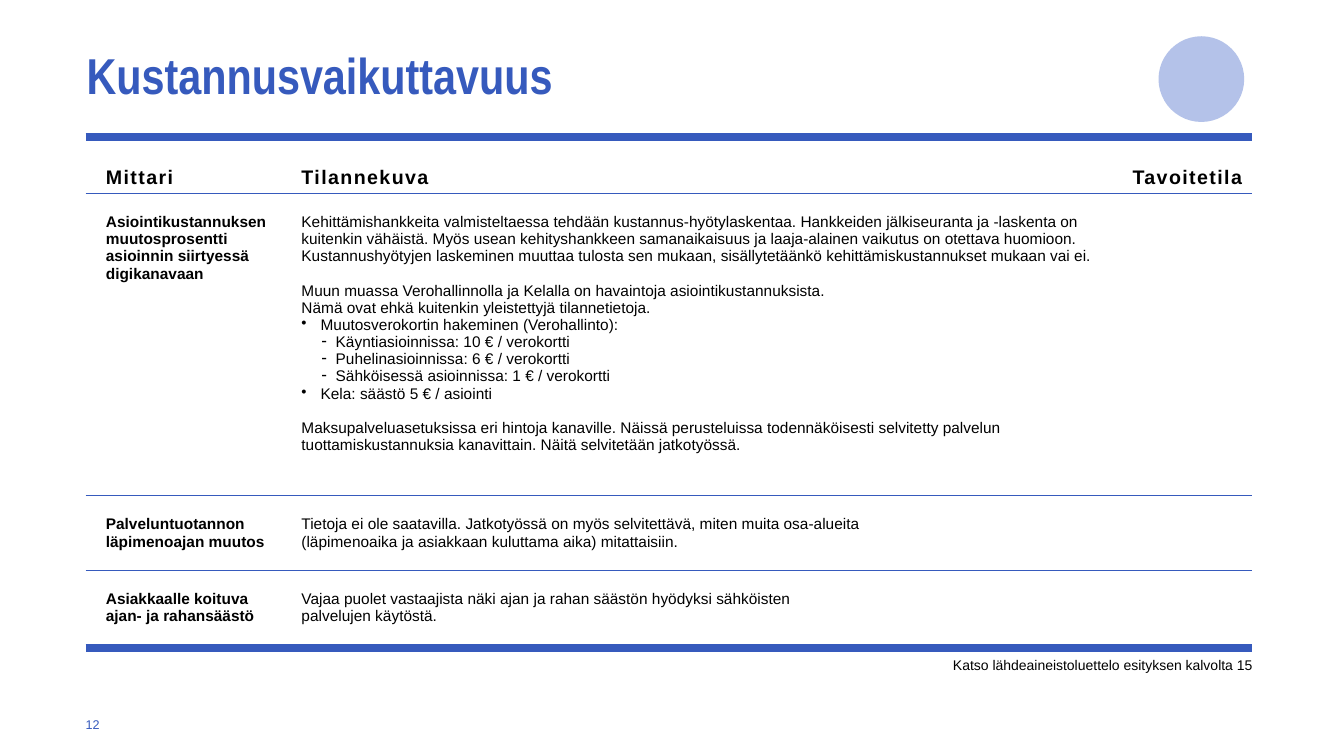
from lxml.etree import SubElement
from pptx import Presentation
from pptx.dml.color import RGBColor
from pptx.enum.shapes import MSO_SHAPE
from pptx.enum.text import MSO_ANCHOR, PP_ALIGN
from pptx.oxml.ns import qn
from pptx.util import Emu, Inches, Pt

INK = {"blue": "365ABD", "pale": "ACBCE7", "black": "000000"}
WIDE, HIGH = 13.33, 7.5
LEFT, SPAN = 0.85, 11.57

deck = Presentation()
deck.slide_width, deck.slide_height = Inches(WIDE), Inches(HIGH)
slide = deck.slides.add_slide(deck.slide_layouts[6])


def style(par, text, size, color="black", bold=False, face="Arial"):
    par.text = text
    font = par.font
    font.name, font.size, font.bold = face, Pt(size), bold
    font.color.rgb = RGBColor.from_string(INK[color])


def label(x, y, w, h, text, size, color="black", align=PP_ALIGN.LEFT, **look):
    frame = slide.shapes.add_textbox(*map(Inches, (x, y, w, h))).text_frame
    frame.word_wrap = True
    frame.margin_left = frame.margin_right = 0
    frame.margin_top = frame.margin_bottom = 0
    frame.vertical_anchor = MSO_ANCHOR.MIDDLE
    par = frame.paragraphs[0]
    par.alignment = align
    style(par, text, size, color, **look)


# Title, footnote and page number
label(LEFT + 0.01, 0.45, 10, 0.58, "Kustannusvaikuttavuus", 36, "blue",
      bold=True, face="Arial Narrow")
label(LEFT + SPAN - 4, 6.5, 4, 0.2,
      "Katso lähdeaineistoluettelo esityksen kalvolta 15", 10,
      align=PP_ALIGN.RIGHT)
label(LEFT, 7.06, 0.4, 0.25, "12", 9, "blue")

# Circle
disc = slide.shapes.add_shape(MSO_SHAPE.OVAL, *map(Inches, (11.49, 0.36, 0.85, 0.85)))
disc.shadow.inherit = False
disc.line.fill.background()
disc.fill.solid()
disc.fill.fore_color.rgb = RGBColor.from_string(INK["pale"])
tint = disc.fill._xPr.find(qn("a:solidFill"))[0]
SubElement(tint, qn("a:alpha"), val="90000")

# Table content: a paragraph is (kind, text)
heads = ["Mittari", "Tilannekuva", "Tavoitetila"]
body = [
    ("Asiointikustannuksen muutosprosentti\nasioinnin siirtyessä digikanavaan", [
        ("plain", "Kehittämishankkeita valmisteltaessa tehdään kustannus-hyötylaskentaa. "
         "Hankkeiden jälkiseuranta ja -laskenta on kuitenkin vähäistä. Myös usean "
         "kehityshankkeen samanaikaisuus ja laaja-alainen vaikutus on otettava huomioon. "
         "Kustannushyötyjen laskeminen muuttaa tulosta sen mukaan, sisällytetäänkö "
         "kehittämiskustannukset mukaan vai ei."),
        ("gap", "Muun muassa Verohallinnolla ja Kelalla on havaintoja asiointikustannuksista.\n"
         "Nämä ovat ehkä kuitenkin yleistettyjä tilannetietoja."),
        ("dot", "Muutosverokortin hakeminen (Verohallinto):"),
        ("dash", "Käyntiasioinnissa: 10 € / verokortti"),
        ("dash", "Puhelinasioinnissa: 6 € / verokortti"),
        ("dash", "Sähköisessä asioinnissa: 1 € / verokortti"),
        ("dot", "Kela: säästö 5 € / asiointi"),
        ("gap", "Maksupalveluasetuksissa eri hintoja kanaville. Näissä perusteluissa "
         "todennäköisesti selvitetty palvelun tuottamiskustannuksia kanavittain. "
         "Näitä selvitetään jatkotyössä."),
    ]),
    ("Palveluntuotannon läpimenoajan muutos", [
        ("plain", "Tietoja ei ole saatavilla. Jatkotyössä on myös selvitettävä, miten muita "
         "osa-alueita\n(läpimenoaika ja asiakkaan kuluttama aika) mitattaisiin."),
    ]),
    ("Asiakkaalle koituva\najan- ja rahansäästö", [
        ("plain", "Vajaa puolet vastaajista näki ajan ja rahan säästön hyödyksi sähköisten\n"
         "palvelujen käytöstä."),
    ]),
]
marks = {"dot": ("•", 0.19, 0.19), "dash": ("-", 0.34, 0.14)}

# Table grid
cols, rows = [1.94, 8.23, 1.4], [0.56, 3, 0.74, 0.77]
rules = [6, 1, 1, 1, 6]
grid = slide.shapes.add_table(len(rows), len(cols), Inches(LEFT), Inches(1.36),
                              Inches(SPAN), Inches(sum(rows))).table
grid.first_row = grid.horz_banding = False
grid._tbl.tblPr.find(qn("a:tableStyleId")).text = "{2D5ABB26-0587-4C30-8999-92F81FD0307C}"
for col, w in zip(grid.columns, cols):
    col.width = Inches(w)
for i, h in enumerate(rows):
    grid.rows[i].height = Inches(h)
    for cell in grid.rows[i].cells:
        cell.margin_left, cell.margin_right = Inches(0.2), Inches(0.1)
        cell.margin_top = Inches(0.2 if i else 0.05)
        cell.margin_bottom = Inches(0.05)
        edge = cell._tc.get_or_add_tcPr()
        for tag, pts in (("a:lnT", rules[i]), ("a:lnB", rules[i + 1])):
            line = SubElement(edge, qn(tag), w=str(Pt(pts)))
            fill = SubElement(line, qn("a:solidFill"))
            SubElement(fill, qn("a:srgbClr"), val=INK["blue"])
        cell.fill.background()

# Header row
for j, head in enumerate(heads):
    cell = grid.cell(0, j)
    cell.vertical_anchor = MSO_ANCHOR.BOTTOM
    par = cell.text_frame.paragraphs[0]
    par.alignment = PP_ALIGN.RIGHT if j == 2 else PP_ALIGN.LEFT
    style(par, head, 14, bold=True)
    for run in par.runs:
        run._r.get_or_add_rPr().set("spc", "100")

# Body rows
for i, (name, parts) in enumerate(body, 1):
    style(grid.cell(i, 0).text_frame.paragraphs[0], name, 11, bold=True)
    frame = grid.cell(i, 1).text_frame
    for k, (kind, text) in enumerate(parts):
        par = frame.add_paragraph() if k else frame.paragraphs[0]
        if kind == "gap":
            par.space_before = Pt(12.3)
        if kind in marks:
            sign, inset, hang = marks[kind]
            props = par._p.get_or_add_pPr()
            props.set("marL", str(Inches(inset)))
            props.set("indent", str(Emu(-Inches(hang))))
            SubElement(props, qn("a:buChar"), char=sign)
        style(par, text, 11)

deck.save("out.pptx")
